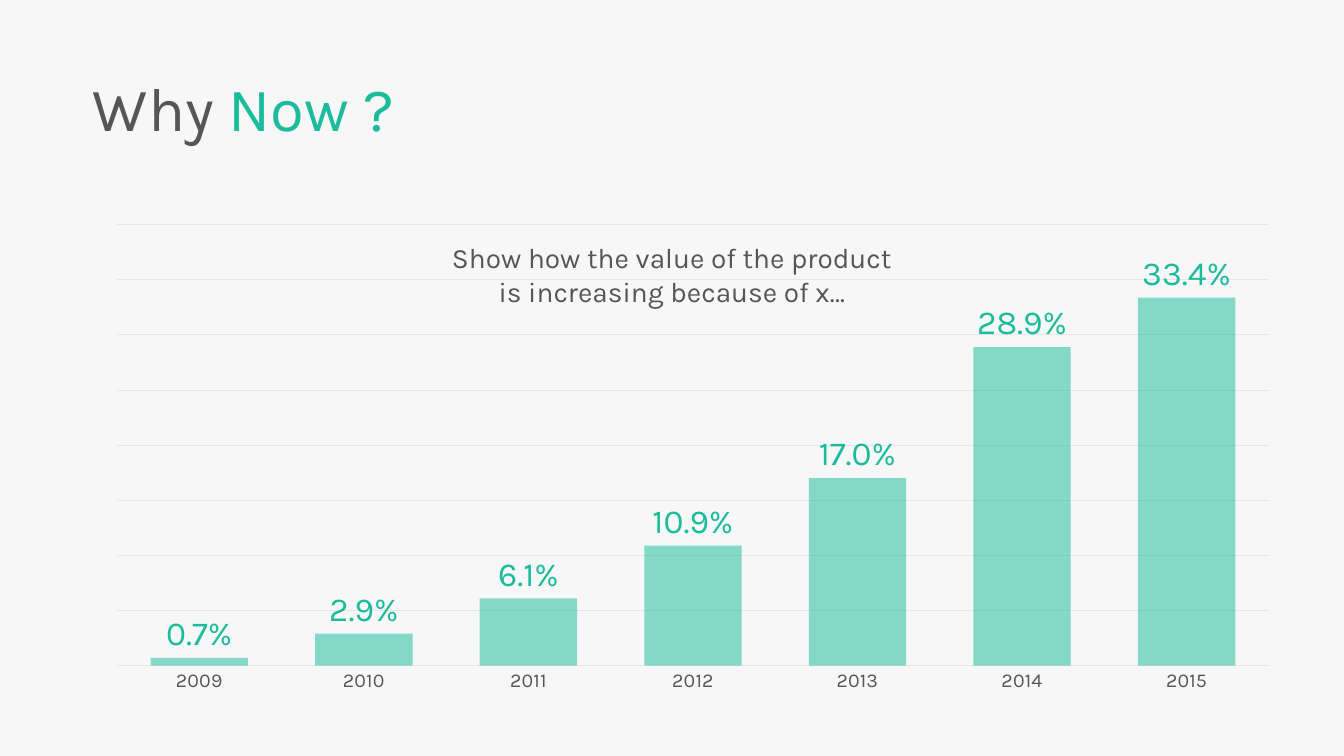
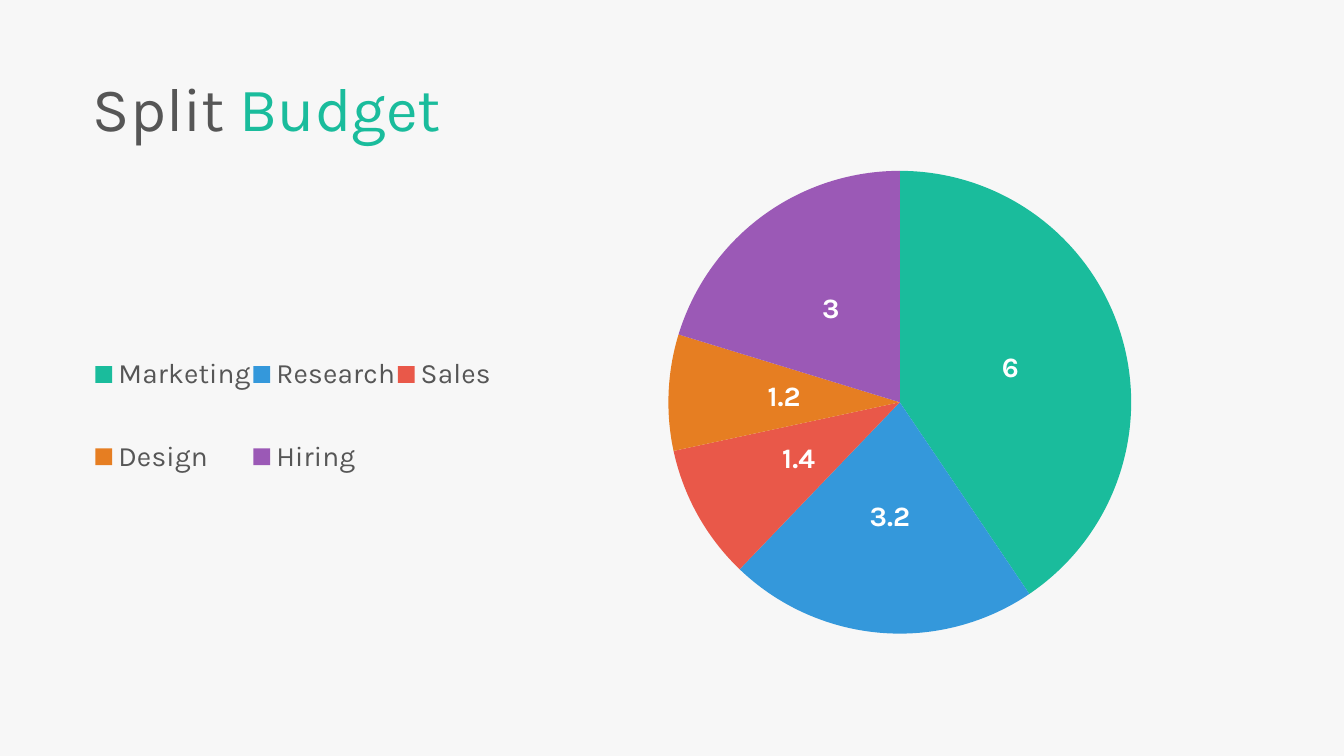
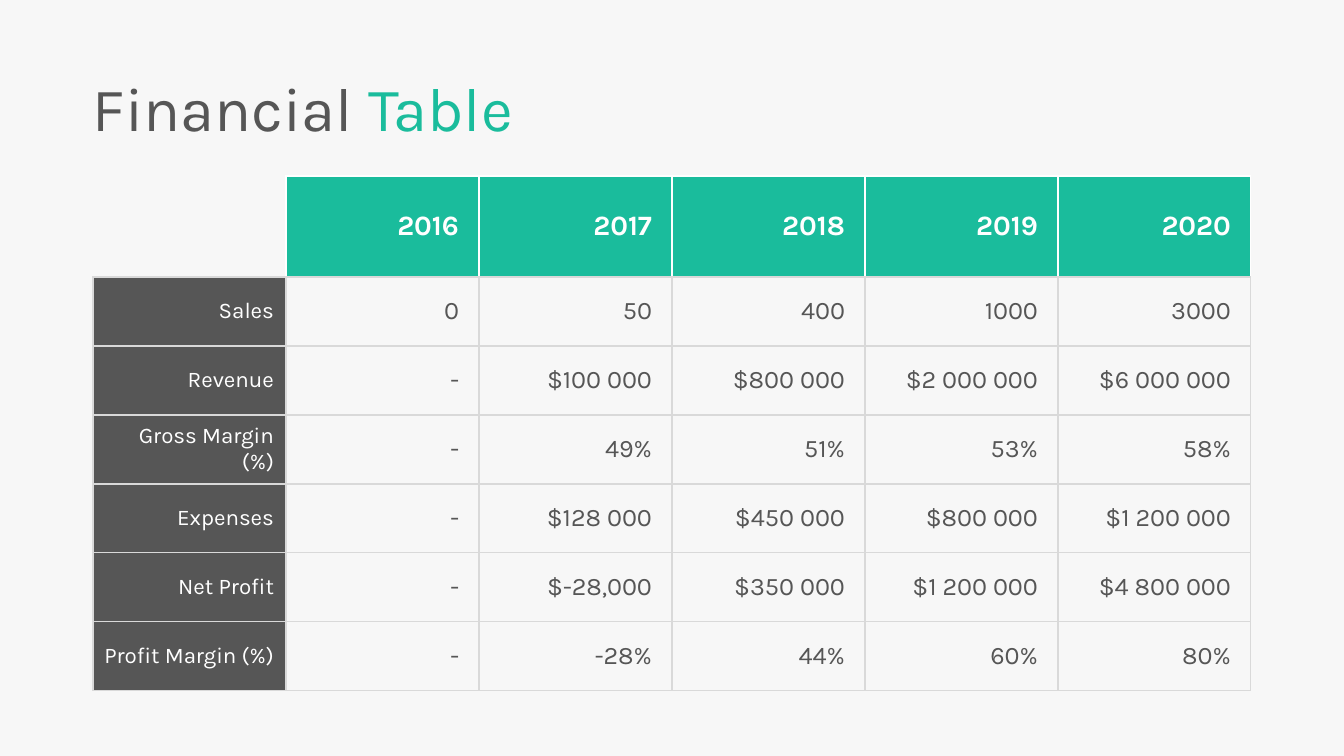
"""Builds three pitch slides: growth columns, budget pie and financial table."""
from pptx import Presentation
from pptx.chart.data import CategoryChartData
from pptx.dml.color import RGBColor
from pptx.enum.chart import XL_CHART_TYPE, XL_LABEL_POSITION, XL_LEGEND_POSITION, XL_TICK_MARK
from pptx.enum.text import MSO_ANCHOR, MSO_AUTO_SIZE, PP_ALIGN
from pptx.oxml.ns import qn
from pptx.oxml.xmlchemy import OxmlElement
from pptx.util import Emu, Pt

FONT = "Karla"
GREEN, GREY, WHITE, PAPER = "1ABC9C", "565656", "FFFFFF", "F7F7F7"
GRID, BORDER = "E6E6E6", "D9D9D9"
BLUE, RED, ORANGE, PURPLE = "3498DB", "E95849", "E67E22", "9B59B6"

GROWTH = {"2009": 0.007, "2010": 0.029, "2011": 0.061, "2012": 0.109,
          "2013": 0.17, "2014": 0.289, "2015": 0.334}
BUDGET = {"Marketing": (6, GREEN), "Research": (3.2, BLUE), "Sales": (1.4, RED),
          "Design": (1.2, ORANGE), "Hiring": (3, PURPLE)}
FINANCES = [
    ["", "2016", "2017", "2018", "2019", "2020"],
    ["Sales", "0", "50", "400", "1000", "3000"],
    ["Revenue", "-", "$100 000", "$800 000", "$2 000 000", "$6 000 000"],
    ["Gross Margin (%)", "-", "49%", "51%", "53%", "58%"],
    ["Expenses", "-", "$128 000", "$450 000", "$800 000", "$1 200 000"],
    ["Net Profit", "-", "$-28,000", "$350 000", "$1 200 000", "$4 800 000"],
    ["Profit Margin (%)", "-", "-28%", "44%", "60%", "80%"],
]


def px(length):
    """Turn pixels into EMU."""
    return Emu(round(length * 914400 / 100.8))


def rgb(colour):
    """Turn a hex string into a colour."""
    return RGBColor.from_string(colour)


def paint(fill, colour):
    """Make a fill solid."""
    fill.solid()
    fill.fore_color.rgb = rgb(colour)


def style_font(font, size, colour, bold=False):
    """Set the family, size, colour and weight of a font."""
    font.name, font.size, font.bold = FONT, Pt(size), bold
    font.color.rgb = rgb(colour)


def style_line(line, colour):
    """Set a thin chart line."""
    line.color.rgb = rgb(colour)
    line.width = Pt(0.75)


def add_run(paragraph, text, size, colour, bold=False):
    """Append one formatted run."""
    run = paragraph.add_run()
    run.text = text
    style_font(run.font, size, colour, bold)


def add_titled_slide(prs, lead, accent):
    """Add a slide with a two-coloured title."""
    slide = prs.slides.add_slide(prs.slide_layouts[5])
    title = slide.shapes.title
    title.left, title.top, title.width, title.height = map(px, (93, 73, 494, 78))
    frame = title.text_frame
    frame.margin_left, frame.margin_right = 0, px(10)
    frame.margin_top = frame.margin_bottom = px(5)
    frame.vertical_anchor = MSO_ANCHOR.TOP
    frame.auto_size = MSO_AUTO_SIZE.SHAPE_TO_FIT_TEXT
    heading = frame.paragraphs[0]
    heading.alignment = PP_ALIGN.LEFT
    heading.line_spacing, heading.space_before = 0.9, Pt(10)
    add_run(heading, lead, 44, GREY)
    add_run(heading, accent, 44, GREEN)
    return slide


def add_caption(slide, text, box):
    """Add a centred, wrapping caption."""
    frame = slide.shapes.add_textbox(*map(px, box)).text_frame
    frame.word_wrap = True
    frame.auto_size = MSO_AUTO_SIZE.SHAPE_TO_FIT_TEXT
    frame.paragraphs[0].alignment = PP_ALIGN.CENTER
    add_run(frame.paragraphs[0], text, 20, GREY)


def place(owner, index, area, inner=False):
    """Fix a plot area or legend at fractions of its chart."""
    for old in owner.findall(qn("c:layout")):
        owner.remove(old)
    layout, manual = OxmlElement("c:layout"), OxmlElement("c:manualLayout")
    settings = [("layoutTarget", "inner")] if inner else []
    settings += [("xMode", "edge"), ("yMode", "edge"), *zip("xywh", area)]
    for tag, value in settings:
        setting = OxmlElement(f"c:{tag}")
        setting.set("val", str(value))
        manual.append(setting)
    layout.append(manual)
    owner.insert(index, layout)


def add_chart(slide, kind, categories, values, box, plot_area):
    """Add a chart with one series and a fixed plot area."""
    data = CategoryChartData()
    data.categories = categories
    data.add_series("Series 1", values)
    chart = slide.shapes.add_chart(kind, *map(px, box), data).chart
    chart.has_title = chart.has_legend = False
    style_font(chart.font, 10, GREY)
    place(chart.plots[0]._element.getparent(), 0, plot_area, inner=True)
    return chart


def label_values(plot, position, number_format, size, colour, bold=False):
    """Show the value of each point."""
    plot.has_data_labels = True
    labels = plot.data_labels
    labels.show_value, labels.position = True, position
    labels.number_format, labels.number_format_is_linked = number_format, False
    style_font(labels.font, size, colour, bold)


def add_growth_chart(slide):
    """Add the translucent growth columns."""
    chart = add_chart(slide, XL_CHART_TYPE.COLUMN_CLUSTERED, list(GROWTH), list(GROWTH.values()),
                      (93, 215, 1200, 490), (0.02, 0.02, 0.96, 0.9))
    plot = chart.plots[0]
    plot.gap_width, plot.overlap, plot.vary_by_categories = 69, 7, False
    columns = plot.series[0].format.fill
    paint(columns, GREEN)
    alpha = OxmlElement("a:alpha")
    alpha.set("val", "52000")
    plot.series[0]._element.find(".//" + qn("a:srgbClr")).append(alpha)
    label_values(plot, XL_LABEL_POSITION.OUTSIDE_END, "0.0%", 24, GREEN)
    years, shares = chart.category_axis, chart.value_axis
    years.major_tick_mark = XL_TICK_MARK.NONE
    style_font(years.tick_labels.font, 14, GREY)
    style_line(years.format.line, GRID)
    shares.visible = False
    shares.minimum_scale, shares.maximum_scale, shares.major_unit = 0, 0.4, 0.05
    style_line(shares.major_gridlines.format.line, GRID)


def add_budget_chart(slide):
    """Add the budget pie with its legend on the left."""
    amounts, colours = zip(*BUDGET.values())
    chart = add_chart(slide, XL_CHART_TYPE.PIE, list(BUDGET), amounts,
                      (93, 170, 1251, 534), (0.46, 0, 0.37, 0.87))
    plot = chart.plots[0]
    for index, colour in enumerate(colours):
        paint(plot.series[0].points[index].format.fill, colour)
    label_values(plot, XL_LABEL_POSITION.CENTER, "General", 20, WHITE, bold=True)
    chart.has_legend = True
    legend = chart.legend
    legend.position, legend.include_in_layout = XL_LEGEND_POSITION.BOTTOM, False
    style_font(legend.font, 20, GREY)
    place(legend._element, 1, (0, 0.26, 0.32, 0.4))


def set_borders(cell, colours):
    """Draw the left, right, top and bottom borders of a cell."""
    properties = cell._tc.get_or_add_tcPr()
    for index, (side, colour) in enumerate(zip("LRTB", colours)):
        line = OxmlElement(f"a:ln{side}")
        line.set("w", str(Pt(1)))
        fill = OxmlElement("a:solidFill" if colour else "a:noFill")
        if colour:
            tint = OxmlElement("a:srgbClr")
            tint.set("val", colour)
            fill.append(tint)
        line.append(fill)
        properties.insert(index, line)


def fill_cell(cell, text, size, colour, bold, background, right_margin, borders):
    """Write and format one table cell."""
    cell.vertical_anchor = MSO_ANCHOR.MIDDLE
    cell.margin_left, cell.margin_right = px(10), px(right_margin)
    cell.margin_top = cell.margin_bottom = px(5)
    if background:
        paint(cell.fill, background)
    else:
        cell.fill.background()
    if text:
        cell.text_frame.paragraphs[0].alignment = PP_ALIGN.RIGHT
        add_run(cell.text_frame.paragraphs[0], text, size, colour, bold)
    set_borders(cell, borders)


def add_finance_table(slide):
    """Add the table of yearly finances."""
    table = slide.shapes.add_table(len(FINANCES), len(FINANCES[0]),
                                   *map(px, (93, 176, 1158, 515))).table
    table.first_row = table.horz_banding = False
    corner = (18, GREY, False, None, 20, [None] * 4)
    header = (20, WHITE, True, GREEN, 20, [WHITE, WHITE, WHITE, BORDER])
    row_label = (16, WHITE, False, GREY, 12, [BORDER] * 4)
    figure = (18, GREY, False, None, 20, [BORDER] * 4)
    for column in table.columns:
        column.width = px(193)
    for r, texts in enumerate(FINANCES):
        table.rows[r].height = px(69 if r else 101)
        first, rest = (row_label, figure) if r else (corner, header)
        for c, text in enumerate(texts):
            fill_cell(table.cell(r, c), text, *(rest if c else first))


def main():
    """Build and save the presentation."""
    prs = Presentation()
    prs.slide_width, prs.slide_height = px(1344), px(756)
    paint(prs.slide_master.background.fill, PAPER)

    why_now = add_titled_slide(prs, "Why ", "Now ?")
    add_growth_chart(why_now)
    add_caption(why_now, "Show how the value of the product is increasing because of x…",
                (431, 236, 482, 78))

    add_budget_chart(add_titled_slide(prs, "Split", " Budget"))
    add_finance_table(add_titled_slide(prs, "Financial ", "Table"))
    prs.save("out.pptx")


if __name__ == "__main__":
    main()
